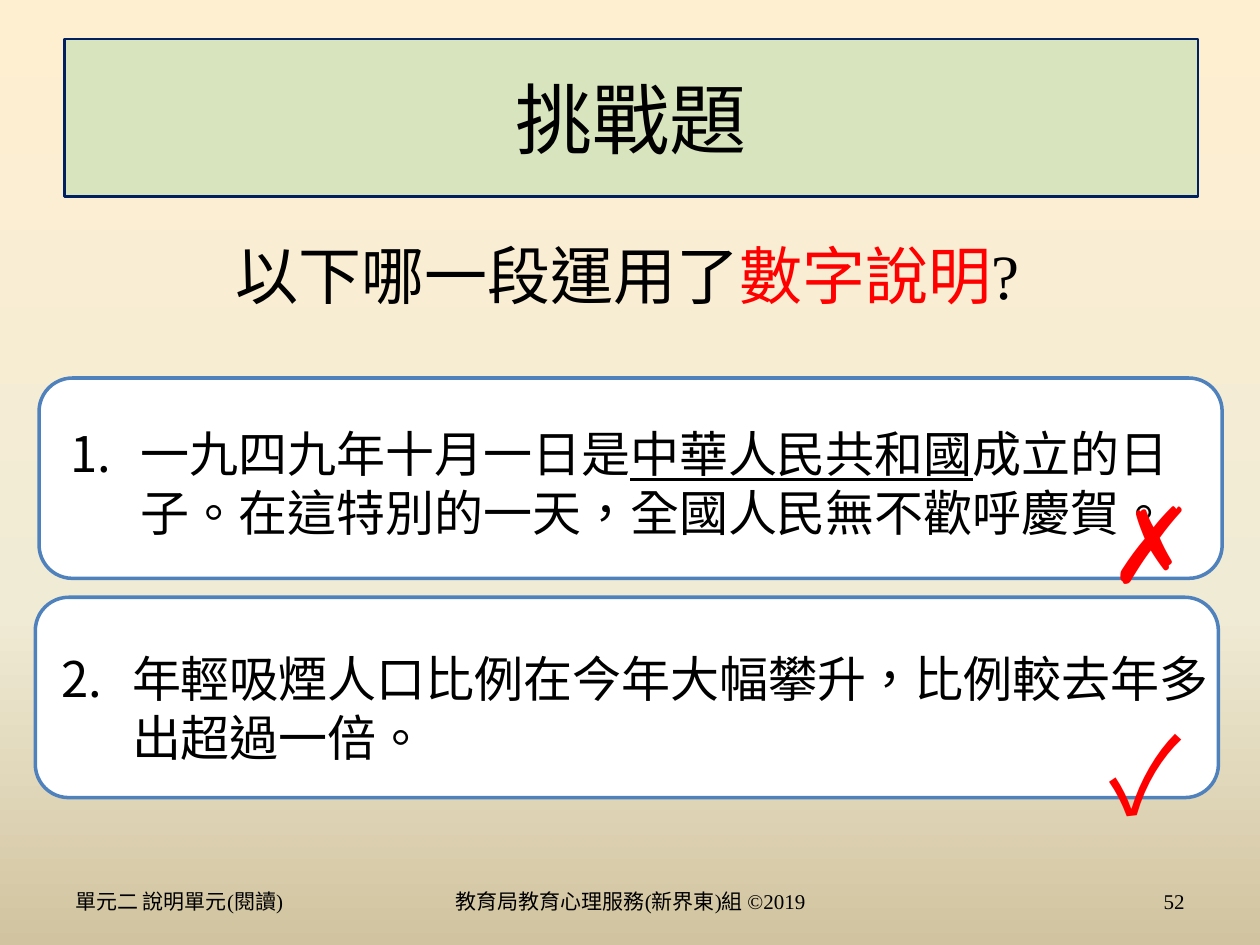
from copy import deepcopy

from pptx import Presentation
from pptx import util as u
from pptx.dml.color import RGBColor
from pptx.enum import shapes, text
from pptx.oxml.ns import qn

SERIF = "Times New Roman"
SANS = "Noto Sans CJK SC"
LEFT, CENTER, RIGHT = text.PP_ALIGN.LEFT, text.PP_ALIGN.CENTER, text.PP_ALIGN.RIGHT
TOP, MIDDLE = text.MSO_ANCHOR.TOP, text.MSO_ANCHOR.MIDDLE


def rgb(value):
    return RGBColor.from_string(value)


class Deck:
    ink = "000000"
    accent = "FF0000"
    card_line = "4F81BD"
    white = "FFFFFF"

    def __init__(self, prs):
        self.s = prs.slides.add_slide(prs.slide_layouts[5])

    def background(self, stops, angle):
        fill = self.s.background.fill
        fill.gradient()
        fill.gradient_angle = angle
        stop_list = self.s.element.find(".//" + qn("a:gsLst"))
        while len(stop_list) < len(stops):
            stop_list.append(deepcopy(stop_list[0]))
        for stop, (position, color) in zip(fill.gradient_stops, stops):
            stop.position = position
            stop.color.rgb = rgb(color)

    def set_text(self, sp, parts, size, font, align=LEFT, anchor=TOP):
        tf = sp.text_frame
        tf.word_wrap = True
        tf.auto_size = text.MSO_AUTO_SIZE.NONE
        tf.vertical_anchor = anchor
        p = tf.paragraphs[0]
        p.alignment = align
        for words, color, underline in parts:
            r = p.add_run()
            r.text = words
            r.font.size = u.Pt(size)
            r.font.name = font
            r.font.color.rgb = rgb(color)
            if underline:
                r.font.underline = True
            rPr = r._r.get_or_add_rPr()
            rPr.set("lang", "zh-TW")
            ea = rPr.makeelement(qn("a:ea"), {"typeface": SANS})
            rPr.find(qn("a:latin")).addnext(ea)
        return p

    def title(self, box, parts):
        sp = self.s.shapes.title
        sp.left, sp.top, sp.width, sp.height = map(u.Inches, box)
        self.set_text(sp, parts, 36, SERIF, CENTER, MIDDLE)
        sp.text_frame.margin_bottom = u.Inches(0.75)

    def shape(self, kind, box, fill, line, width):
        sp = self.s.shapes.add_shape(kind, *map(u.Inches, box))
        sp.shadow.inherit = False
        sp.fill.solid()
        sp.fill.fore_color.rgb = rgb(fill)
        sp.line.color.rgb = rgb(line)
        sp.line.width = u.Pt(width)
        return sp

    def banner(self, box, words):
        sp = self.shape(shapes.MSO_SHAPE.RECTANGLE, box, "D7E4BD", "002060", 1.5)
        self.set_text(sp, [(words, self.ink, False)], 44, SERIF, CENTER, MIDDLE)

    def card(self, left, top):
        kind = shapes.MSO_SHAPE.ROUNDED_RECTANGLE
        return self.shape(kind, (left, top, 9.39, 1.59), self.white, self.card_line, 2)

    def textbox(self, box, parts, size, font, **layout):
        sp = self.s.shapes.add_textbox(*map(u.Inches, box))
        return sp, self.set_text(sp, parts, size, font, **layout)

    def item(self, box, number, parts):
        sp, p = self.textbox(box, parts, 28, SANS)
        pPr = p._p.get_or_add_pPr()
        indent = u.Inches(0.56)
        pPr.set("marL", str(indent))
        pPr.set("indent", str(-indent))
        bullet = pPr.makeelement(
            qn("a:buAutoNum"), {"type": "arabicPeriod", "startAt": str(number)})
        pPr.append(bullet)
        return sp

    def footer(self, left, width, words, align):
        self.textbox((left, 6.95, width, 0.4), [(words, self.ink, False)], 12, SERIF,
                     align=align, anchor=MIDDLE)

    def mark(self, left, top, symbol):
        self.textbox((left, top, 0.97, 1.11), [(symbol, self.accent, False)], 60, SANS)


def main():
    prs = Presentation()
    prs.slide_width = u.Inches(10)
    prs.slide_height = u.Inches(7.5)
    deck = Deck(prs)
    ink = deck.ink

    deck.background([(0, "FFEFD1"), (0.65, "F0EBD5"), (1, "D1C39F")], 270)
    deck.title((0.48, 1.9, 9, 1.25), [
        ("以下哪一段運用了", ink, False),
        ("數字說明", deck.accent, False),
        ("?", ink, False),
    ])

    first_card = deck.card(0.31, 3)
    first_item = deck.item((0.46, 3.31, 9.22, 1.03), 1, [
        ("一九四九年十月一日是", ink, False),
        ("中華人民共和國", ink, True),
        ("成立的日子。在這特別的一天，全國人民無不歡呼慶賀。", ink, False),
    ])
    first_item.fill.solid()
    first_item.fill.fore_color.rgb = rgb(deck.white)
    deck.s.shapes.add_group_shape([first_card, first_item])

    deck.card(0.28, 4.74)
    deck.item((0.39, 5.1, 9.37, 1.04), 2, [
        ("年輕吸煙人口比例在今年大幅攀升，比例較去年多 出超過一倍。", ink, False),
    ])

    deck.footer(0.5, 2.33, "單元二 說明單元(閱讀)", LEFT)
    deck.footer(3.42, 3.17, "教育局教育心理服務(新界東)組 ©2019", CENTER)
    deck.footer(7.17, 2.33, "52", RIGHT)

    deck.banner((0.51, 0.31, 9, 1.25), "挑戰題")
    deck.mark(8.71, 5.58, "✓")
    deck.mark(8.7, 3.75, "✗")
    prs.save("out.pptx")


if __name__ == "__main__":
    main()
